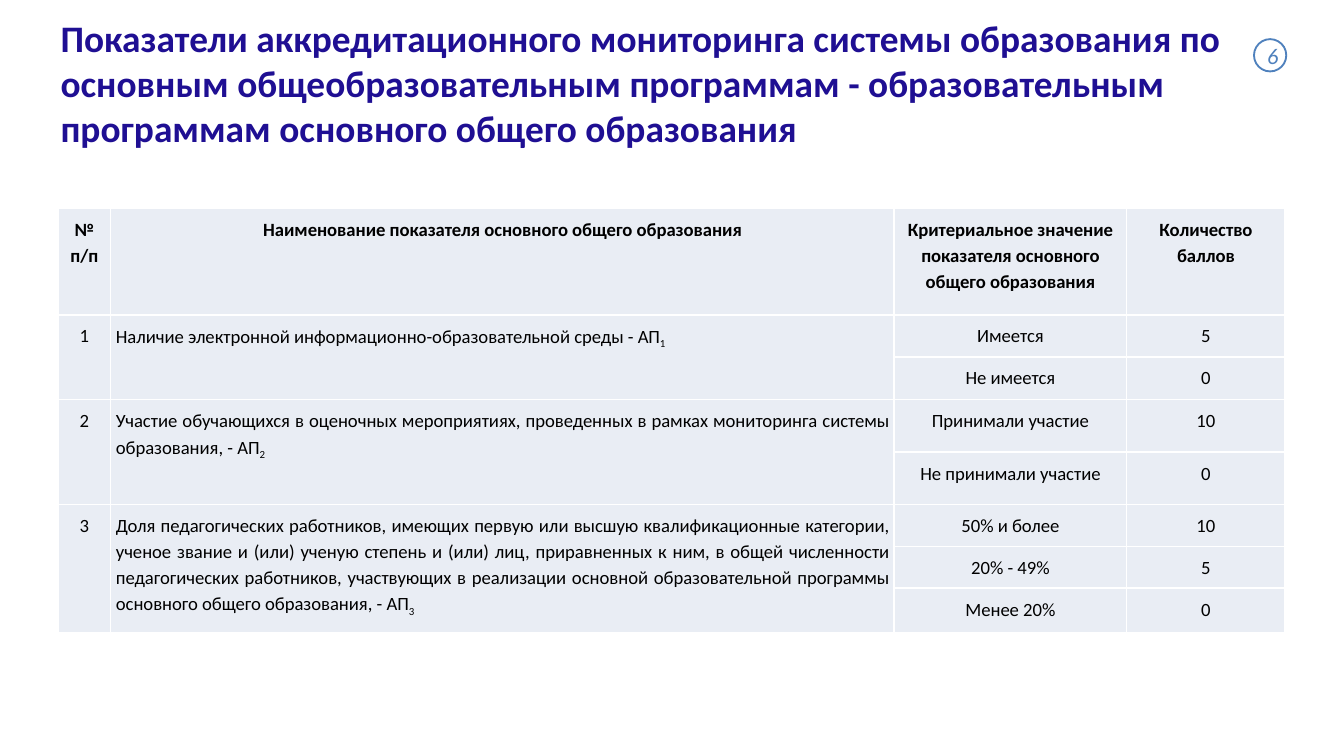
from lxml.etree import SubElement
from pptx import Presentation
from pptx.dml.color import RGBColor
from pptx.enum.shapes import MSO_SHAPE
from pptx.enum.text import MSO_ANCHOR, PP_ALIGN
from pptx.oxml.ns import qn
from pptx.util import Cm, Pt

NAVY = RGBColor(0x1F, 0x0F, 0x93)
BLUE = RGBColor(0x4F, 0x81, 0xBD)
PALE = RGBColor(0xE9, 0xED, 0xF4)
WHITE = RGBColor(0xFF, 0xFF, 0xFF)
BLACK = RGBColor(0, 0, 0)
FONT = "Calibri"

TITLE = ("Показатели аккредитационного мониторинга системы образования по "
         "основным общеобразовательным программам - образовательным "
         "программам основного общего образования")
HEADS = ["№ п/п", "Наименование показателя основного общего образования",
         "Критериальное значение показателя основного общего образования",
         "Количество баллов"]
# Each item: its name, then its criteria with their points
ITEMS = [
    ("Наличие электронной информационно-образовательной среды - АП",
     [("Имеется", 5), ("Не имеется", 0)]),
    ("Участие обучающихся в оценочных мероприятиях, проведенных в рамках "
     "мониторинга системы образования, - АП",
     [("Принимали участие", 10), ("Не принимали участие", 0)]),
    ("Доля педагогических работников, имеющих первую или высшую "
     "квалификационные категории, ученое звание и (или) ученую степень и "
     "(или) лиц, приравненных к ним, в общей численности педагогических "
     "работников, участвующих в реализации основной образовательной "
     "программы основного общего образования, - АП",
     [("50% и более", 10), ("20% - 49%", 5), ("Менее 20%", 0)]),
]
COLS = [0.99, 14.81, 4.39, 3]
ROWS = [2.01, 0.79, 0.81, 0.99, 0.99, 0.79, 0.79, 0.84]


def style(para, size, color, align, bold=False, italic=False):
    para.alignment = align
    font = para.font
    font.name, font.size = FONT, Pt(size)
    font.bold, font.italic = bold, italic
    font.color.rgb = color


def add_title(slide, x, y, w, h):
    title = slide.shapes.title
    title.left, title.top, title.width, title.height = map(Cm, (x, y, w, h))
    frame = title.text_frame
    frame.text = TITLE
    frame.word_wrap = True
    frame.vertical_anchor = MSO_ANCHOR.MIDDLE
    style(frame.paragraphs[0], 20, NAVY, PP_ALIGN.LEFT, bold=True)


def add_lines(cell):
    props = cell._tc.get_or_add_tcPr()
    for side in ("a:lnL", "a:lnR", "a:lnT", "a:lnB"):
        line = SubElement(props, qn(side), w=str(Pt(1)))
        fill = SubElement(line, qn("a:solidFill"))
        SubElement(fill, qn("a:srgbClr"), val=str(WHITE))


def fill_cell(cell, text, align=PP_ALIGN.CENTER, bold=False, sub=None):
    cell.margin_left = cell.margin_right = Cm(0.1)
    cell.margin_top = cell.margin_bottom = Cm(0.13)
    para = cell.text_frame.paragraphs[0]
    para.line_spacing = 1.15
    style(para, 10, BLACK, align, bold)
    para.add_run().text = str(text)
    if sub:
        run = para.add_run()
        run.text = str(sub)
        run._r.get_or_add_rPr().set("baseline", "-25000")


def add_grid(slide, x, y, w, h):
    frame = slide.shapes.add_table(len(ROWS), len(COLS),
                                   Cm(x), Cm(y), Cm(w), Cm(h))
    table = frame.table
    table.first_row = table.horz_banding = False
    for col, part in zip(table.columns, COLS):
        col.width = Cm(w * part / sum(COLS))
    for row, part in zip(table.rows, ROWS):
        row.height = Cm(h * part / sum(ROWS))
    for cell in table.iter_cells():
        add_lines(cell)
        cell.fill.solid()
        cell.fill.fore_color.rgb = PALE
    # Header row
    for col, head in enumerate(HEADS):
        fill_cell(table.cell(0, col), head, bold=True)
    # Items, each spanning the rows of its criteria
    top = 1
    for num, (name, marks) in enumerate(ITEMS, 1):
        last = top + len(marks) - 1
        for col in (0, 1):
            table.cell(top, col).merge(table.cell(last, col))
        fill_cell(table.cell(top, 0), num)
        fill_cell(table.cell(top, 1), name, PP_ALIGN.JUSTIFY, sub=num)
        for row, (mark, score) in enumerate(marks, top):
            fill_cell(table.cell(row, 2), mark)
            fill_cell(table.cell(row, 3), score)
        top = last + 1


def add_badge(slide, x, y, size):
    badge = slide.shapes.add_shape(MSO_SHAPE.OVAL, Cm(x), Cm(y),
                                   Cm(size), Cm(size))
    badge.shadow.inherit = False
    badge.fill.solid()
    badge.fill.fore_color.rgb = WHITE
    badge.line.color.rgb = BLUE
    badge.line.width = Pt(1)
    frame = badge.text_frame
    frame.margin_left = Cm(0.1)
    frame.margin_right = frame.margin_top = frame.margin_bottom = 0
    frame.word_wrap = False
    frame.vertical_anchor = MSO_ANCHOR.MIDDLE
    frame.text = "6"
    style(frame.paragraphs[0], 12, BLUE, PP_ALIGN.CENTER, italic=True)


def main():
    deck = Presentation()
    deck.slide_width, deck.slide_height = Cm(25.4), Cm(14.28)
    slide = deck.slides.add_slide(deck.slide_layouts[5])
    add_title(slide, 0.89, 0.74, 22.86, 1.65)
    add_grid(slide, 1.1, 3.94, 23.19, 8.01)
    add_badge(slide, 23.7, 0.74, 0.61)
    deck.save("out.pptx")


if __name__ == "__main__":
    main()
